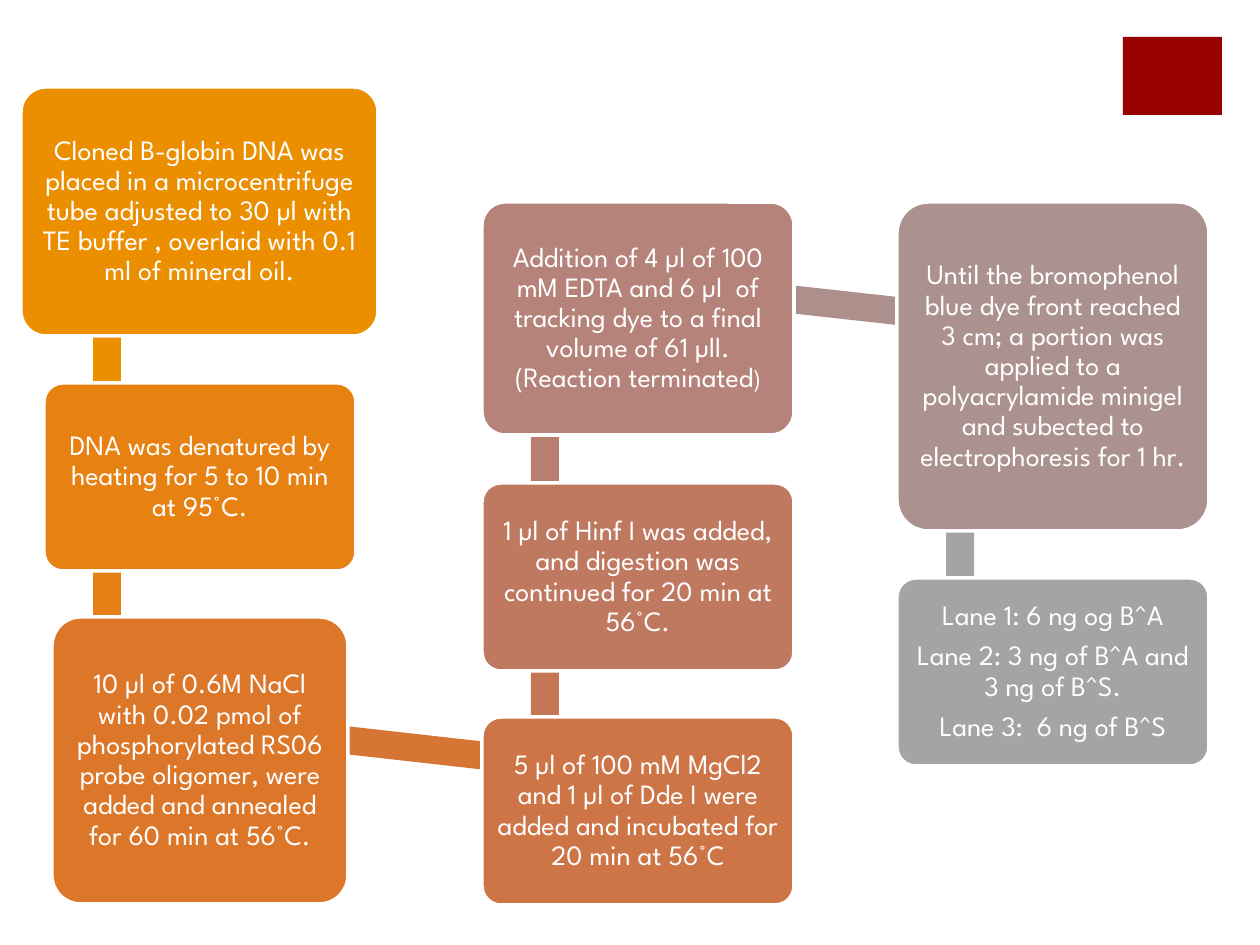
from dataclasses import dataclass

import pptx
import pptx.dml.color
import pptx.enum.shapes
import pptx.enum.text
import pptx.util

EMU_PER_PX = 914400 / 126
STEP_WIDTH = 312
STEP_HEIGHT = 188
BAR_THICKNESS = 28
LEFT_COLUMN, MIDDLE_COLUMN, RIGHT_COLUMN = 44, 482, 897
DOWN, UP = 90, 270


@dataclass(frozen=True)
class Theme:
    font: str = "League Spartan"
    text_size: int = 16
    small_size: int = 14
    text: str = "FFFFFF"
    outline: str = "FFFFFF"
    accent: str = "990000"
    outline_width: int = 2
    corner: float = 0.1
    text_inset: int = 9
    line_spacing: float = 0.9
    space_after: float = 5.6


@dataclass(frozen=True)
class Step:
    left: int
    top: int
    fill: str
    paragraphs: tuple[str, ...]
    width: int = STEP_WIDTH
    height: int = STEP_HEIGHT
    small_ending: str = ""


@dataclass(frozen=True)
class Bar:
    """A flat bar that joins two steps, placed by its centre."""
    center_x: int
    center_y: int
    length: int
    rotation: float
    fill: str


THEME = Theme()

BARS = [
    Bar(107, 296, 263, DOWN, "EB8F00"),
    Bar(107, 570, 282, DOWN, "E67F15"),
    Bar(326, 738, 440, 6.4, "D67634"),
    Bar(545, 645, 233, UP, "C67654"),
    Bar(545, 399, 256, UP, "B87F71"),
    Bar(752, 295, 418, 6.3, "AD8F8C"),
    Bar(960, 471, 304, DOWN, "A4A4A4"),
]

STEPS = [
    Step(21, 87, "EB8F00",
         ("Cloned B-globin DNA was placed in a microcentrifuge tube adjusted to "
          "30 µl with TE buffer , overlaid with 0.1 ml of mineral oil.",),
         width=357, height=249),
    Step(LEFT_COLUMN, 383, "E78112",
         ("DNA was denatured by heating for 5 to 10 min at 95°C.",)),
    Step(52, 617, "DC772A",
         ("10 µl of 0.6M NaCl with 0.02 pmol of phosphorylated RS06 probe "
          "oligomer, were added and annealed for 60 min at 56°C.",),
         width=296, height=287),
    Step(MIDDLE_COLUMN, 717, "CD7546",
         ("5 µl of 100 mM MgCl2 and 1 µl of Dde I were added and incubated "
          "for 20 min at 56°C",)),
    Step(MIDDLE_COLUMN, 483, "C07961",
         ("1 µl of Hinf I was added, and digestion was continued for 20 min "
          "at 56°C.",)),
    Step(MIDDLE_COLUMN, 202, "B58379",
         ("Addition of 4 µl of 100 mM EDTA and 6 µl  of tracking dye to a final "
          "volume of 61 µll. (Reaction terminated",),
         height=233, small_ending=")"),
    Step(RIGHT_COLUMN, 202, "AB928F",
         ("Until the bromophenol blue dye front reached 3 cm; a portion was "
          "applied to a polyacrylamide minigel and subected to electrophoresis "
          "for 1 hr.",),
         height=329),
    Step(RIGHT_COLUMN, 578, "A4A4A4",
         ("Lane 1: 6 ng og B^A",
          "Lane 2: 3 ng of B^A and 3 ng of B^S.",
          "Lane 3:  6 ng of B^S")),
]


def px(length: float) -> pptx.util.Emu:
    return pptx.util.Emu(round(length * EMU_PER_PX))


def rgb(value: str) -> pptx.dml.color.RGBColor:
    return pptx.dml.color.RGBColor.from_string(value)


def set_format(target, values: dict) -> None:
    for name, value in values.items():
        setattr(target, name, value)


def add_block(slide, kind, left: float, top: float, width: int, height: int, fill: str):
    """Add a filled preset shape with no line and no shadow."""
    block = slide.shapes.add_shape(kind, px(left), px(top), px(width), px(height))
    block.shadow.inherit = False
    block.fill.solid()
    block.fill.fore_color.rgb = rgb(fill)
    block.line.fill.background()
    return block


def add_run(paragraph, text: str, size: int) -> None:
    run = paragraph.add_run()
    run.text = text
    set_format(run.font, {"name": THEME.font, "size": pptx.util.Pt(size)})
    run.font.color.rgb = rgb(THEME.text)


def draw_bar(slide, bar: Bar) -> None:
    block = add_block(slide, pptx.enum.shapes.MSO_SHAPE.RECTANGLE,
                      bar.center_x - bar.length / 2, bar.center_y - BAR_THICKNESS / 2,
                      bar.length, BAR_THICKNESS, bar.fill)
    block.rotation = bar.rotation


def draw_step(slide, step: Step) -> None:
    block = add_block(slide, pptx.enum.shapes.MSO_SHAPE.ROUNDED_RECTANGLE,
                      step.left, step.top, step.width, step.height, step.fill)
    block.adjustments[0] = THEME.corner
    block.line.color.rgb = rgb(THEME.outline)
    block.line.width = pptx.util.Pt(THEME.outline_width)

    frame = block.text_frame
    inset = px(THEME.text_inset)
    set_format(frame, {
        "word_wrap": True,
        "vertical_anchor": pptx.enum.text.MSO_ANCHOR.MIDDLE,
        "margin_left": inset,
        "margin_right": inset,
        "margin_top": inset,
        "margin_bottom": inset,
    })
    for index, text in enumerate(step.paragraphs):
        paragraph = frame.add_paragraph() if index else frame.paragraphs[0]
        set_format(paragraph, {
            "alignment": pptx.enum.text.PP_ALIGN.CENTER,
            "line_spacing": THEME.line_spacing,
            "space_after": pptx.util.Pt(THEME.space_after),
        })
        add_run(paragraph, text, THEME.text_size)
    if step.small_ending:
        add_run(paragraph, step.small_ending, THEME.small_size)


def main() -> None:
    deck = pptx.Presentation()
    set_format(deck, {"slide_width": px(1260), "slide_height": px(945)})
    slide = deck.slides.add_slide(deck.slide_layouts[6])
    add_block(slide, pptx.enum.shapes.MSO_SHAPE.RECTANGLE, 1123, 37, 99, 78, THEME.accent)
    for bar in BARS:
        draw_bar(slide, bar)
    for step in STEPS:
        draw_step(slide, step)
    deck.save("out.pptx")


if __name__ == "__main__":
    main()
